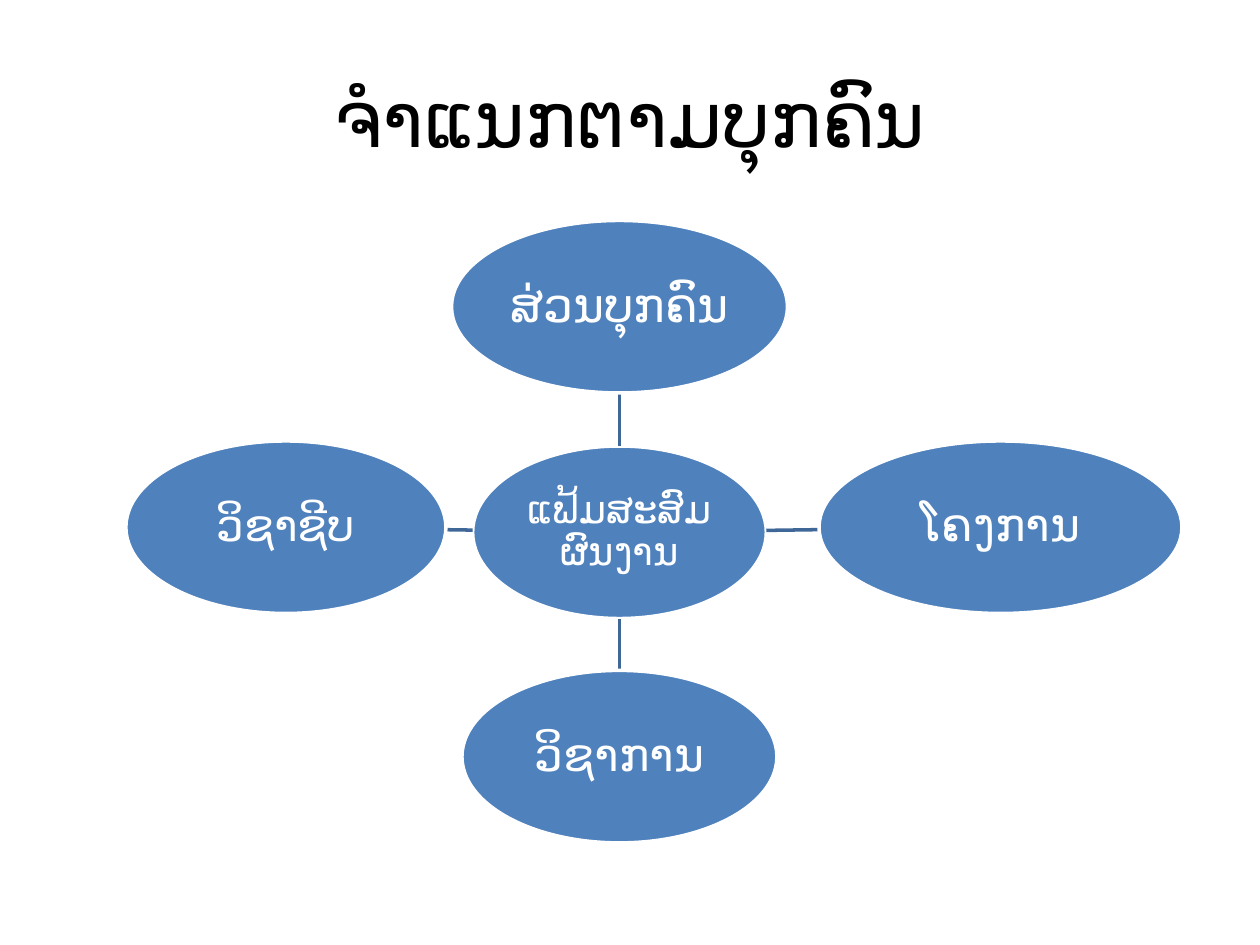
from dataclasses import dataclass
from math import hypot

from lxml import etree
from pptx import Presentation
from pptx.dml.color import RGBColor
from pptx.enum.shapes import MSO_CONNECTOR, MSO_SHAPE
from pptx.enum.text import MSO_ANCHOR, PP_ALIGN
from pptx.oxml.ns import qn
from pptx.slide import Slide
from pptx.text.text import TextFrame
from pptx.util import Pt

OVAL = MSO_SHAPE.OVAL
LINE = MSO_CONNECTOR.STRAIGHT
MIDDLE = MSO_ANCHOR.MIDDLE
CENTER = PP_ALIGN.CENTER

FONT = "Calibri"
COLORS = {"title": "000000", "fill": "4F81BD", "text": "FFFFFF",
          "edge": "FFFFFF", "link": "3F6797"}
HEIGHT = 98.6
STROKE = 2
INSET = 1.44


@dataclass
class Node:
    """An ellipse given by its centre, width and font size in points."""
    text: str
    x: float
    y: float
    width: float
    size: float


HUB = Node("ແຟ້ມສະສົມຜົນງານ", 354, 304.2, 167.8, 22)
SPOKES = [
    Node("ສ່ວນບຸກຄົນ", 354, 175.3, 192, 27),
    Node("ໂຄງການ", 571.7, 301.3, 207.4, 26),
    Node("ວິຊາການ", 354, 432.4, 180, 26),
    Node("ວິຊາຊີບ", 163.4, 301.3, 182.9, 25),
]


def color(name: str) -> RGBColor:
    return RGBColor.from_string(COLORS[name])


def set_text(frame: TextFrame, text: str, size: float, tint: str) -> None:
    frame.text = text
    frame.word_wrap = True
    frame.vertical_anchor = MIDDLE
    para = frame.paragraphs[0]
    para.alignment = CENTER
    font = para.runs[0].font
    font.name = FONT
    font.size = Pt(size)
    font.color.rgb = color(tint)


def draw_node(slide: Slide, node: Node) -> None:
    oval = slide.shapes.add_shape(
        OVAL, Pt(node.x - node.width / 2), Pt(node.y - HEIGHT / 2),
        Pt(node.width), Pt(HEIGHT))
    oval.shadow.inherit = False
    oval.fill.solid()
    oval.fill.fore_color.rgb = color("fill")
    oval.line.color.rgb = color("edge")
    oval.line.width = Pt(STROKE)
    frame = oval.text_frame
    frame.margin_left = frame.margin_right = Pt(INSET)
    frame.margin_top = frame.margin_bottom = Pt(INSET)
    set_text(frame, node.text, node.size, "text")
    para = frame.paragraphs[0]
    para.line_spacing = 0.9
    para.space_after = Pt(node.size * 0.35)


def rim(node: Node, other: Node) -> tuple[Pt, Pt]:
    """Point where the line to the other centre leaves the ellipse."""
    dx, dy = other.x - node.x, other.y - node.y
    scale = 1 / hypot(dx / (node.width / 2), dy / (HEIGHT / 2))
    return Pt(node.x + dx * scale), Pt(node.y + dy * scale)


def draw_link(slide: Slide, start: Node, end: Node) -> None:
    link = slide.shapes.add_connector(LINE, *rim(start, end), *rim(end, start))
    link.line.color.rgb = color("link")
    link.line.width = Pt(STROKE)
    etree.SubElement(link._element.spPr, qn("a:effectLst"))


def main() -> None:
    deck = Presentation()
    deck.slide_width, deck.slide_height = Pt(720), Pt(540)
    slide = deck.slides.add_slide(deck.slide_layouts[5])

    title = slide.shapes.title
    title.left, title.top = Pt(36), Pt(21.6)
    title.width, title.height = Pt(648), Pt(90)
    set_text(title.text_frame, "ຈຳແນກຕາມບຸກຄົນ", 44, "title")

    draw_node(slide, HUB)
    for spoke in SPOKES:
        draw_link(slide, HUB, spoke)
        draw_node(slide, spoke)
    deck.save("out.pptx")


if __name__ == "__main__":
    main()
